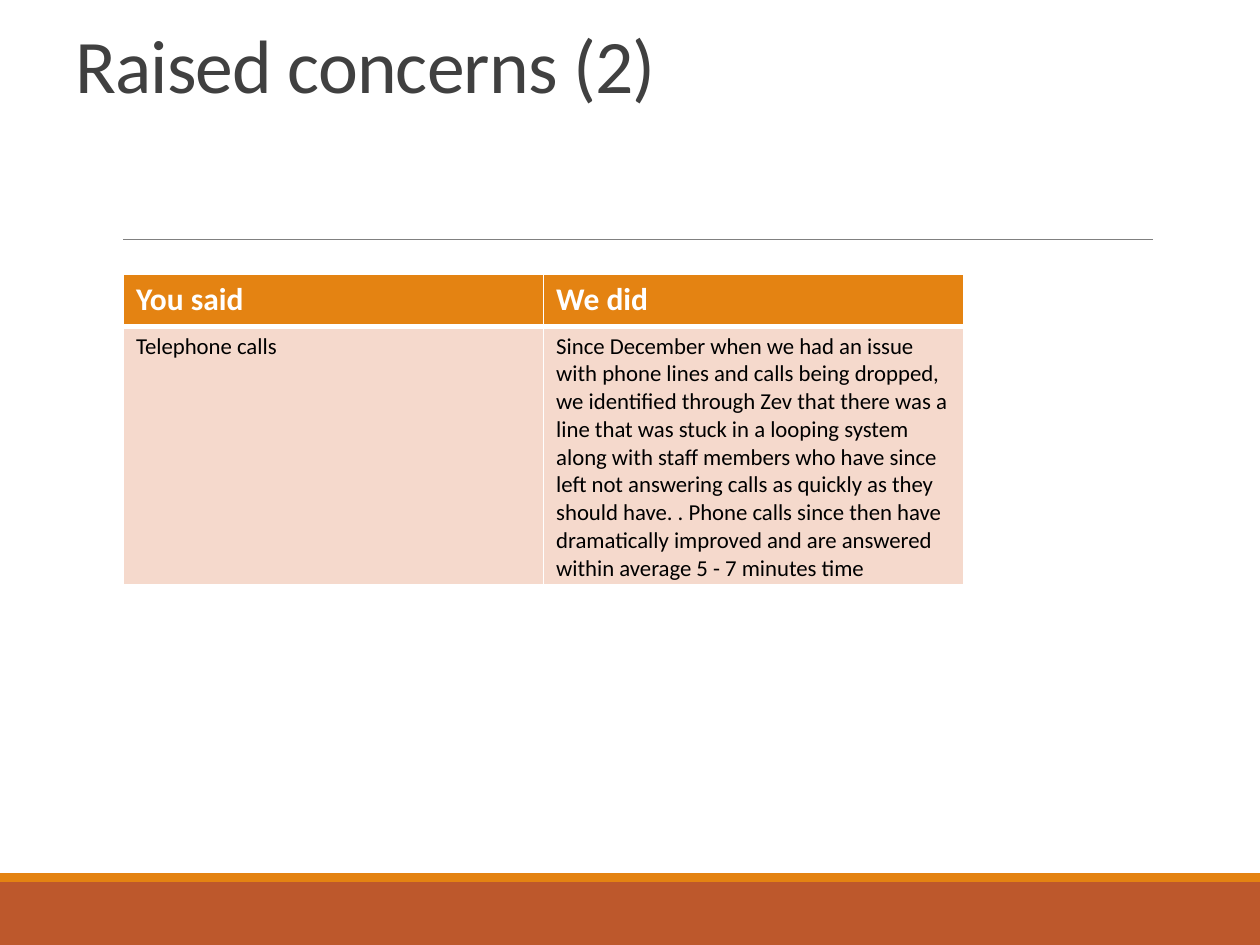
from lxml import etree
from pptx import Presentation
from pptx.dml.color import RGBColor
from pptx.enum.shapes import MSO_CONNECTOR, MSO_SHAPE
from pptx.enum.text import MSO_ANCHOR
from pptx.oxml.ns import qn
from pptx.util import Inches, Pt

BLANK_LAYOUT = 6
STRAIGHT = MSO_CONNECTOR.STRAIGHT
RECTANGLE = MSO_SHAPE.RECTANGLE
BOTTOM = MSO_ANCHOR.BOTTOM
FONT = "Calibri"
ORANGE, RUST, BLUSH = "E48312", "BD582C", "F5D9CC"
WHITE, BLACK, CHARCOAL, GRAY = "FFFFFF", "000000", "404040", "808080"

CONCERNS = [
    ("You said", "We did"),
    (
        "Telephone calls",
        "Since December when we had an issue with phone lines and calls being "
        "dropped, we identified through Zev that there was a line that was stuck "
        "in a looping system along with staff members who have since left not "
        "answering calls as quickly as they should have. . Phone calls since then "
        "have dramatically improved and are answered within average 5 - 7 minutes "
        "time",
    ),
]


def color(value):
    """Turn a hex string into a colour."""
    return RGBColor.from_string(value)


def add_run(paragraph, text, size, ink, bold=False):
    """Add one formatted run and return it."""
    run = paragraph.add_run()
    run.text = text
    run.font.name = FONT
    run.font.size = Pt(size)
    run.font.bold = bold
    run.font.color.rgb = color(ink)
    return run


def add_band(slide, left, top, width, height, fill):
    """Add a plain filled rectangle."""
    band = slide.shapes.add_shape(
        RECTANGLE, Inches(left), Inches(top), Inches(width), Inches(height)
    )
    band.shadow.inherit = False
    band.fill.solid()
    band.fill.fore_color.rgb = color(fill)
    band.line.fill.background()


def add_footer(slide, left, top, width, height):
    """Add the footer band with its thin stripe on top."""
    stripe = 0.07
    add_band(slide, left, top + stripe, width, height - stripe, RUST)
    add_band(slide, left, top, width, stripe, ORANGE)


def add_rule(slide, left, top, width):
    """Add the thin horizontal rule below the title."""
    rule = slide.shapes.add_connector(
        STRAIGHT, Inches(left), Inches(top), Inches(left + width), Inches(top)
    )
    rule.line.color.rgb = color(GRAY)
    rule.line.width = Pt(0.5)
    etree.SubElement(rule._element.spPr, qn("a:effectLst"))


def add_title(slide, left, top, width, height, text):
    """Add the slide title."""
    title = slide.shapes.add_textbox(
        Inches(left), Inches(top), Inches(width), Inches(height)
    )
    frame = title.text_frame
    frame.word_wrap = True
    frame.vertical_anchor = BOTTOM
    paragraph = frame.paragraphs[0]
    paragraph.line_spacing = 0.85
    run = add_run(paragraph, text, 43.2, CHARCOAL)
    run.font._element.set("spc", "-50")


def set_borders(cell, top, bottom):
    """Give a cell white borders, with the top and bottom widths in points."""
    properties = cell._tc.get_or_add_tcPr()
    widths = {"lnL": 1, "lnR": 1, "lnT": top, "lnB": bottom}
    for position, (side, width) in enumerate(widths.items()):
        border = etree.Element(qn(f"a:{side}"), w=str(Pt(width)))
        fill = etree.SubElement(border, qn("a:solidFill"))
        etree.SubElement(fill, qn("a:srgbClr"), val=WHITE)
        properties.insert(position, border)


def add_concerns_table(slide, left, top, width, height, rows):
    """Add the table of concerns and responses."""
    header_height = 0.41
    table = slide.shapes.add_table(
        len(rows), len(rows[0]),
        Inches(left), Inches(top), Inches(width), Inches(height),
    ).table
    body_height = (height - header_height) / (len(rows) - 1)
    for row_index, texts in enumerate(rows):
        header = row_index == 0
        table.rows[row_index].height = Inches(header_height if header else body_height)
        for column_index, text in enumerate(texts):
            cell = table.cell(row_index, column_index)
            cell.fill.solid()
            cell.fill.fore_color.rgb = color(ORANGE if header else BLUSH)
            set_borders(cell, 3 if row_index == 1 else 1, 3 if header else 1)
            add_run(
                cell.text_frame.paragraphs[0], text,
                18 if header else 13, WHITE if header else BLACK, header,
            )


def main():
    """Build and save the slide."""
    presentation = Presentation()
    presentation.slide_width = Inches(10)
    presentation.slide_height = Inches(7.5)
    slide = presentation.slides.add_slide(presentation.slide_layouts[BLANK_LAYOUT])
    add_footer(slide, 0, 6.93, 10, 0.57)
    add_rule(slide, 0.98, 1.9, 8.17)
    add_title(slide, 0.5, 0.3, 8.17, 0.61, "Raised concerns (2)")
    add_concerns_table(slide, 0.98, 2.18, 6.67, 2.46, CONCERNS)
    presentation.save("out.pptx")


if __name__ == "__main__":
    main()
